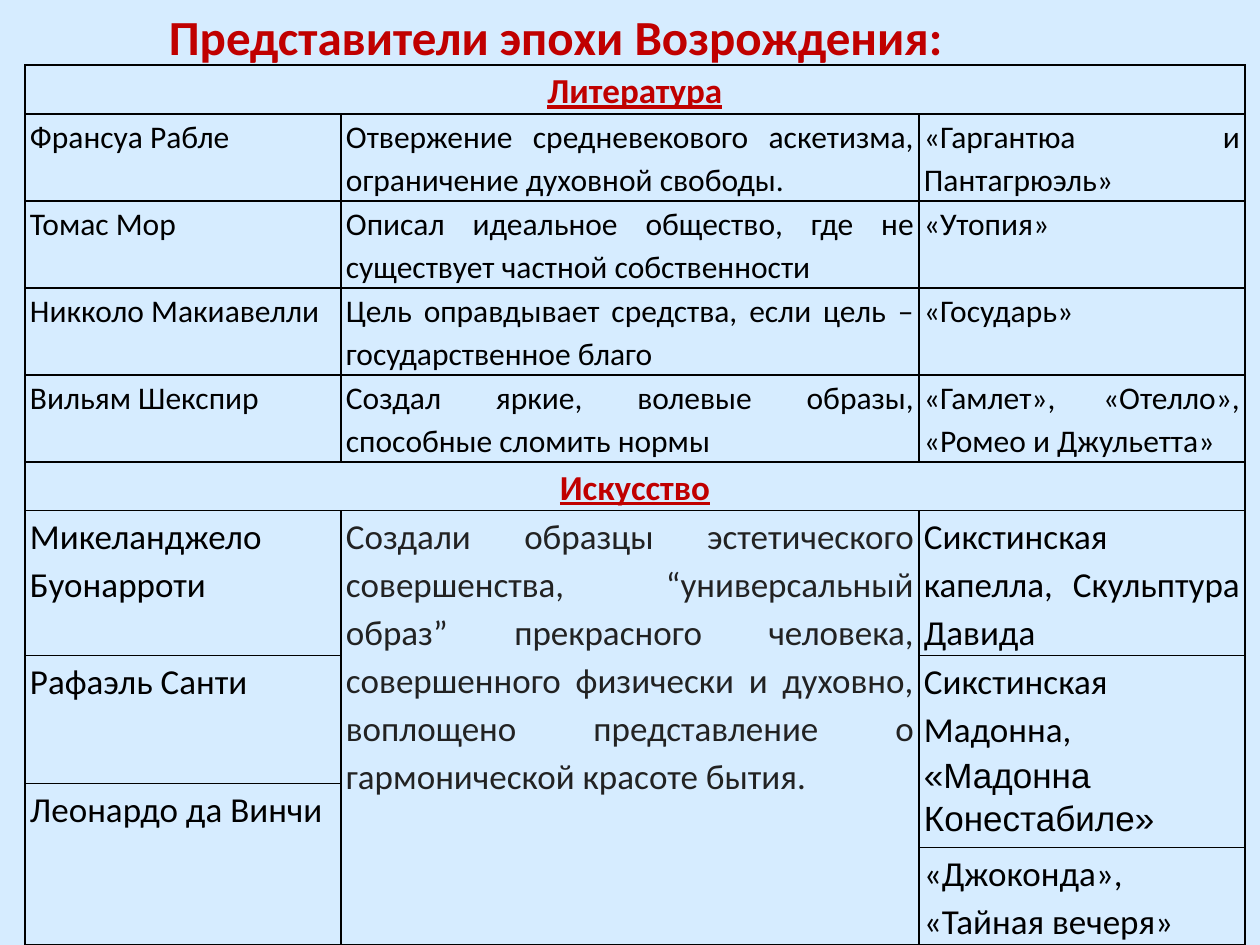
from dataclasses import dataclass

from lxml import etree
from pptx import Presentation
from pptx import util as u
from pptx.dml.color import RGBColor
from pptx.enum import text
from pptx.oxml import ns

RED, BLACK, GREY, SKY = "C00000", "000000", "222222", "D6ECFF"
COLUMNS = [316, 578, 326]
ROWS = [49, 87, 87, 87, 87, 49, 145, 128, 64, 97]
LINE_SPACING = 1.12  # keeps every row within its set height


@dataclass
class Entry:
    row: int
    column: int
    words: str
    size: int = 18
    color: str = BLACK
    heading: bool = False
    rows: int = 1
    columns: int = 1
    arial: str = ""


def px(length: int) -> u.Emu:
    return u.Emu(round(length * 914400 / 126))


def rgb(value: str) -> RGBColor:
    return RGBColor.from_string(value)


def style(span, size: int, color: str, bold: bool = False,
          underline: bool = False, face: str = "Calibri") -> None:
    font = span.font
    font.name, font.size = face, u.Pt(size)
    font.bold, font.underline = bold, underline
    font.color.rgb = rgb(color)


def heading(row: int, words: str) -> Entry:
    return Entry(row, 0, words, 20, RED, heading=True, columns=3)


def frame_cell(cell) -> None:
    """Thin insets, black borders on every side, no fill."""
    cell.margin_left = cell.margin_right = px(5)
    cell.margin_top = cell.margin_bottom = 0
    properties = cell._tc.get_or_add_tcPr()
    for side in ("lnL", "lnR", "lnT", "lnB"):
        line = etree.SubElement(properties, ns.qn(f"a:{side}"), w=str(u.Pt(1)))
        fill = etree.SubElement(line, ns.qn("a:solidFill"))
        etree.SubElement(fill, ns.qn("a:srgbClr"), val=BLACK)
    cell.fill.background()


def write_entry(table, entry: Entry) -> None:
    cell = table.cell(entry.row, entry.column)
    if entry.rows > 1 or entry.columns > 1:
        cell.merge(table.cell(entry.row + entry.rows - 1,
                              entry.column + entry.columns - 1))
    para = cell.text_frame.paragraphs[0]
    para.text = entry.words
    para.line_spacing = LINE_SPACING
    para.alignment = (text.PP_ALIGN.CENTER if entry.heading
                      else text.PP_ALIGN.JUSTIFY)
    style(para.runs[0], entry.size, entry.color, entry.heading, entry.heading)
    if entry.arial:
        span = para.add_run()
        span.text = entry.arial
        style(span, entry.size, entry.color, face="Arial")


WRITERS = [
    ("Франсуа Рабле",
     "Отвержение средневекового аскетизма, ограничение духовной свободы.",
     "«Гаргантюа и Пантагрюэль»"),
    ("Томас Мор",
     "Описал идеальное общество, где не существует частной собственности",
     "«Утопия»"),
    ("Никколо Макиавелли",
     "Цель оправдывает средства, если цель – государственное благо",
     "«Государь»"),
    ("Вильям Шекспир",
     "Создал яркие, волевые образы, способные сломить нормы",
     "«Гамлет», «Отелло», «Ромео и Джульетта»"),
]
ARTISTS = [
    Entry(6, 0, "Микеланджело Буонарроти", 20),
    Entry(6, 1, "Создали образцы эстетического совершенства, “универсальный "
                "образ” прекрасного человека, совершенного физически и духовно, "
                "воплощено представление о гармонической красоте бытия.",
          20, GREY, rows=4),
    Entry(6, 2, "Сикстинская капелла, Скульптура Давида", 20),
    Entry(7, 0, "Рафаэль Санти", 20),
    Entry(7, 2, "Сикстинская Мадонна, ", 20, rows=2,
          arial="«Мадонна Конестабиле»"),
    Entry(8, 0, "Леонардо да Винчи", 20, rows=2),
    Entry(9, 2, "«Джоконда», «Тайная вечеря»", 20),
]


def main() -> None:
    deck = Presentation()
    deck.slide_width, deck.slide_height = px(1260), px(945)
    page = deck.slides.add_slide(deck.slide_layouts[5])
    page.background.fill.solid()
    page.background.fill.fore_color.rgb = rgb(SKY)

    # Title
    title = page.shapes.title
    title.left, title.top, title.width, title.height = map(px, (134, 0, 843, 111))
    frame = title.text_frame
    frame.text = "Представители эпохи Возрождения:"
    frame.vertical_anchor = text.MSO_ANCHOR.TOP
    frame.auto_size = text.MSO_AUTO_SIZE.NONE
    frame.paragraphs[0].alignment = text.PP_ALIGN.CENTER
    style(frame.paragraphs[0].runs[0], 28, RED, bold=True)

    # Table grid
    table = page.shapes.add_table(len(ROWS), len(COLUMNS), px(25), px(65),
                                  px(sum(COLUMNS)), px(sum(ROWS))).table
    table.first_row = table.horz_banding = False
    for column, width in zip(table.columns, COLUMNS):
        column.width = px(width)
    for row, height in zip(table.rows, ROWS):
        row.height = px(height)
    for cell in table.iter_cells():
        frame_cell(cell)

    # Table text
    writers = [Entry(row, column, words)
               for row, line in enumerate(WRITERS, 1)
               for column, words in enumerate(line)]
    for entry in [heading(0, "Литература"), *writers,
                  heading(5, "Искусство"), *ARTISTS]:
        write_entry(table, entry)

    deck.save("out.pptx")


if __name__ == "__main__":
    main()
